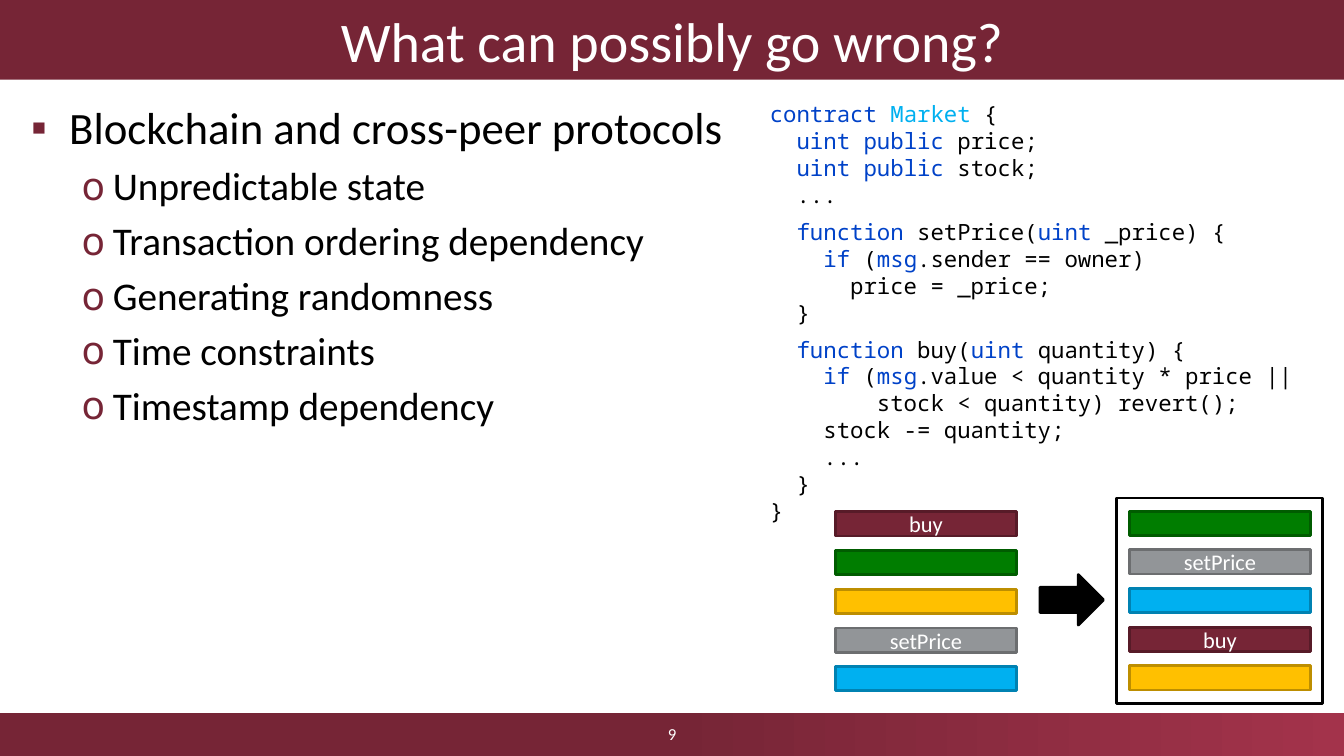
"""Build the slide on blockchain and cross-peer protocol pitfalls."""
import pptx
import pptx.dml.color
import pptx.enum.shapes
import pptx.enum.text
import pptx.oxml
import pptx.oxml.ns
import pptx.util

Cm, Pt = pptx.util.Cm, pptx.util.Pt
SHAPES = pptx.enum.shapes.MSO_SHAPE
MIDDLE = pptx.enum.text.MSO_ANCHOR.MIDDLE
CENTER = pptx.enum.text.PP_ALIGN.CENTER
MAROON, WHITE, BLACK, BLUE, CYAN = "762536", "FFFFFF", "000000", "0042C8", "00B0F0"


def color(value):
    return pptx.dml.color.RGBColor.from_string(value)


def set_text(paragraph, text, size, text_color, typeface="Calibri"):
    run = paragraph.add_run()
    run.text = text
    for name, value in {"size": Pt(size), "name": typeface, "bold": False}.items():
        setattr(run.font, name, value)
    run.font.color.rgb = color(text_color)


presentation = pptx.Presentation()
presentation.slide_width, presentation.slide_height = Cm(33.87), Cm(19.05)
slide = presentation.slides.add_slide(presentation.slide_layouts[1])

title, body = slide.shapes.title, slide.placeholders[1]
footer = slide.shapes.add_shape(SHAPES.RECTANGLE, 0, Cm(17.98), Cm(33.87), Cm(1.07))
number = slide.shapes.add_textbox(Cm(13.13), Cm(17.98), Cm(7.62), Cm(1.02))
code = slide.shapes.add_textbox(Cm(19.15), Cm(2.41), Cm(14.15), Cm(11.38))

placeholder_boxes = [(title, (0, 0, 33.87, 2.01)), (body, (0.53, 2.39, 32.82, 15.37))]
for shape, box in placeholder_boxes:
    for name, value in zip(("left", "top", "width", "height"), box):
        setattr(shape, name, Cm(value))
    shape.text_frame.auto_size = pptx.enum.text.MSO_AUTO_SIZE.NONE

title.fill.solid()
title.fill.fore_color.rgb = color(MAROON)
for shape, text, size in [(title, "What can possibly go wrong?", 40), (number, "9", 12)]:
    shape.text_frame.word_wrap = True
    shape.text_frame.vertical_anchor = MIDDLE
    paragraph = shape.text_frame.paragraphs[0]
    paragraph.alignment = CENTER
    set_text(paragraph, text, size, WHITE)

footer.shadow.inherit = False
footer.line.fill.background()
footer.fill.gradient()
footer.fill.gradient_angle = 0
for stop, position, value in zip(footer.fill.gradient_stops, (0.5, 1), (MAROON, "A3334B")):
    stop.position = position
    stop.color.rgb = color(value)

topics = [
    "Blockchain and cross-peer protocols",
    "Unpredictable state",
    "Transaction ordering dependency",
    "Generating randomness",
    "Time constraints",
    "Timestamp dependency",
]
levels = [
    {"size": 32, "margin": 0.96, "hanging": 0.96, "bullet": "▪", "typeface": "Arial"},
    {"size": 28, "margin": 2.06, "hanging": 0.79, "bullet": "o", "typeface": "Noto Sans Mono"},
]
for index, topic in enumerate(topics):
    paragraph = body.text_frame.paragraphs[0] if index == 0 else body.text_frame.add_paragraph()
    paragraph.level = min(index, 1)
    level = levels[paragraph.level]
    paragraph.space_before = Pt(level["size"] * 0.2 if index else 0)
    properties = paragraph._p.get_or_add_pPr()
    properties.set("marL", str(Cm(level["margin"])))
    properties.set("indent", str(-Cm(level["hanging"])))
    namespace = pptx.oxml.ns.nsdecls("a")
    for xml in (
        f'<a:buClr {namespace}><a:srgbClr val="{MAROON}"/></a:buClr>',
        f'<a:buFont {namespace} typeface="{level["typeface"]}"/>',
        f'<a:buChar {namespace} char="{level["bullet"]}"/>',
    ):
        properties.append(pptx.oxml.parse_xml(xml))
    set_text(paragraph, topic, level["size"], BLACK)

# Backticks enclose the highlighted words.
source = """contract `Market` {
  `uint public `price;
  `uint public `stock;
  ...
  `function `setPrice(`uint` _price) {
    `if `(`msg`.sender == owner)
      price = _price;
  }
  `function `buy(`uint` quantity) {
    `if `(`msg`.value < quantity * price ||
        stock < quantity) revert();
    stock -= quantity;
    ...
  }
}""".replace("contract ", "`contract `")
code.text_frame.word_wrap = True
for index, line in enumerate(source.split("\n")):
    paragraph = code.text_frame.paragraphs[0] if index == 0 else code.text_frame.add_paragraph()
    paragraph.line_spacing = Pt(19.2)
    paragraph.space_before = Pt(7.2 if "function" in line else 0)
    for position, part in enumerate(line.split("`")):
        highlight = CYAN if part == "Market" else BLUE
        if part:
            set_text(paragraph, part, 16, highlight if position % 2 else BLACK, "Noto Sans Mono")

transactions = {
    "buy": (MAROON, "571B28", "buy"),
    "green": ("007D00", "005C00", ""),
    "yellow": ("FFC000", "BD8E00", ""),
    "setPrice": ("929598", "6C6E70", "setPrice"),
    "cyan": (CYAN, "0082B2", ""),
}
orders = [
    (21.06, 12.9, ["buy", "green", "yellow", "setPrice", "cyan"]),
    (28.47, 12.88, ["green", "setPrice", "cyan", "buy", "yellow"]),
]
figures = [
    (SHAPES.RIGHT_ARROW, (26.21, 14.48, 1.6, 1.27), (BLACK, BLACK, "")),
    (SHAPES.RECTANGLE, (28.14, 12.55, 5.18, 5.18), (None, BLACK, "")),
]
for left, top, order in orders:
    for row, name in enumerate(order):
        box = (left, top + row * 0.975, 4.55, 0.61)
        figures.append((SHAPES.RECTANGLE, box, transactions[name]))

for kind, box, (fill, outline, label) in figures:
    shape = slide.shapes.add_shape(kind, *[Cm(value) for value in box])
    shape.shadow.inherit = False
    if fill:
        shape.fill.solid()
        shape.fill.fore_color.rgb = color(fill)
    else:
        shape.fill.background()
    shape.line.color.rgb = color(outline)
    shape.line.width = Pt(2)
    if label:
        shape.text_frame.vertical_anchor = MIDDLE
        paragraph = shape.text_frame.paragraphs[0]
        paragraph.alignment = CENTER
        set_text(paragraph, label, 16, WHITE)

presentation.save("out.pptx")
